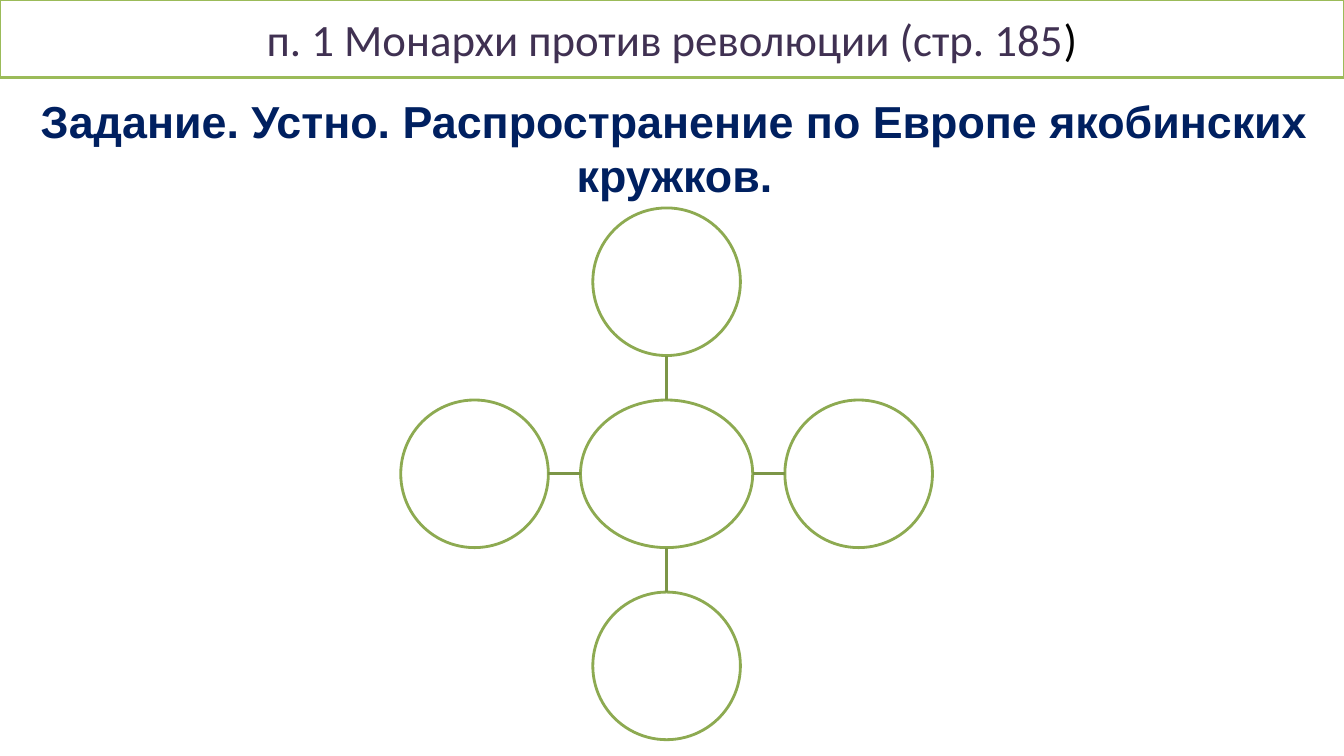
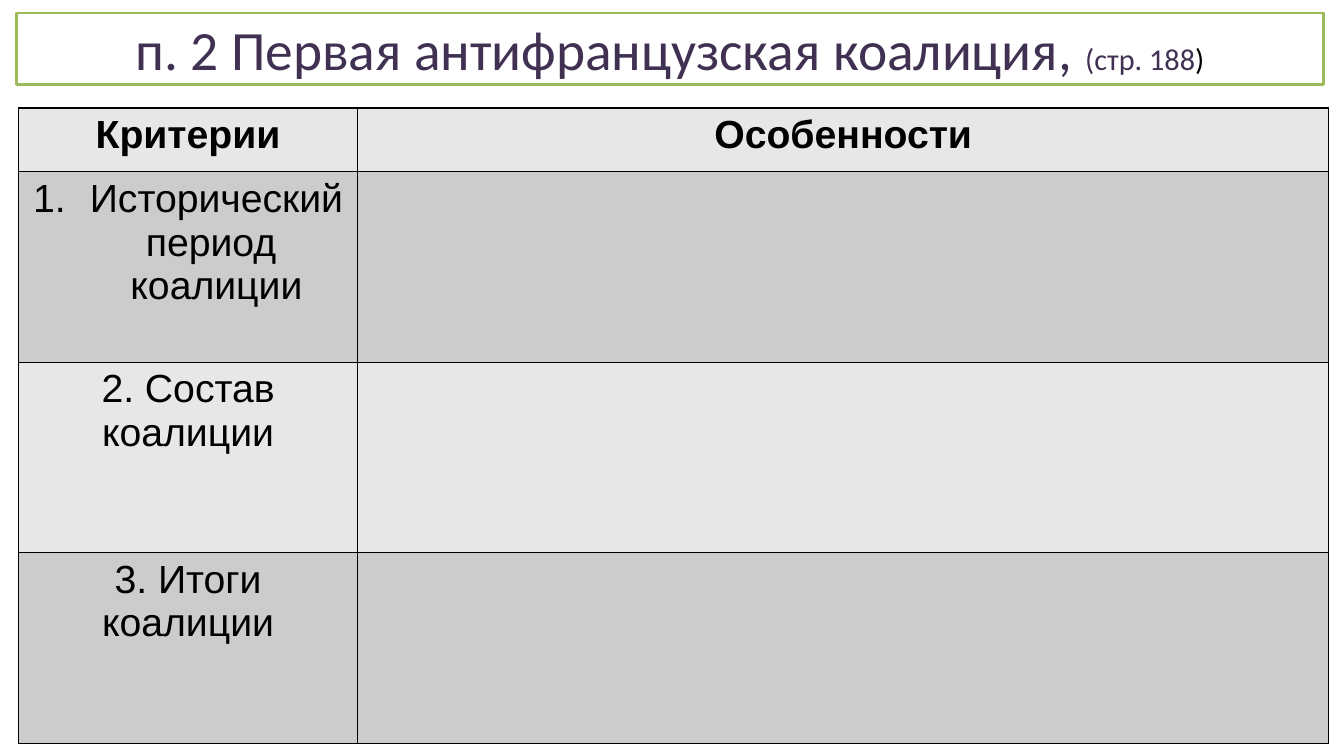
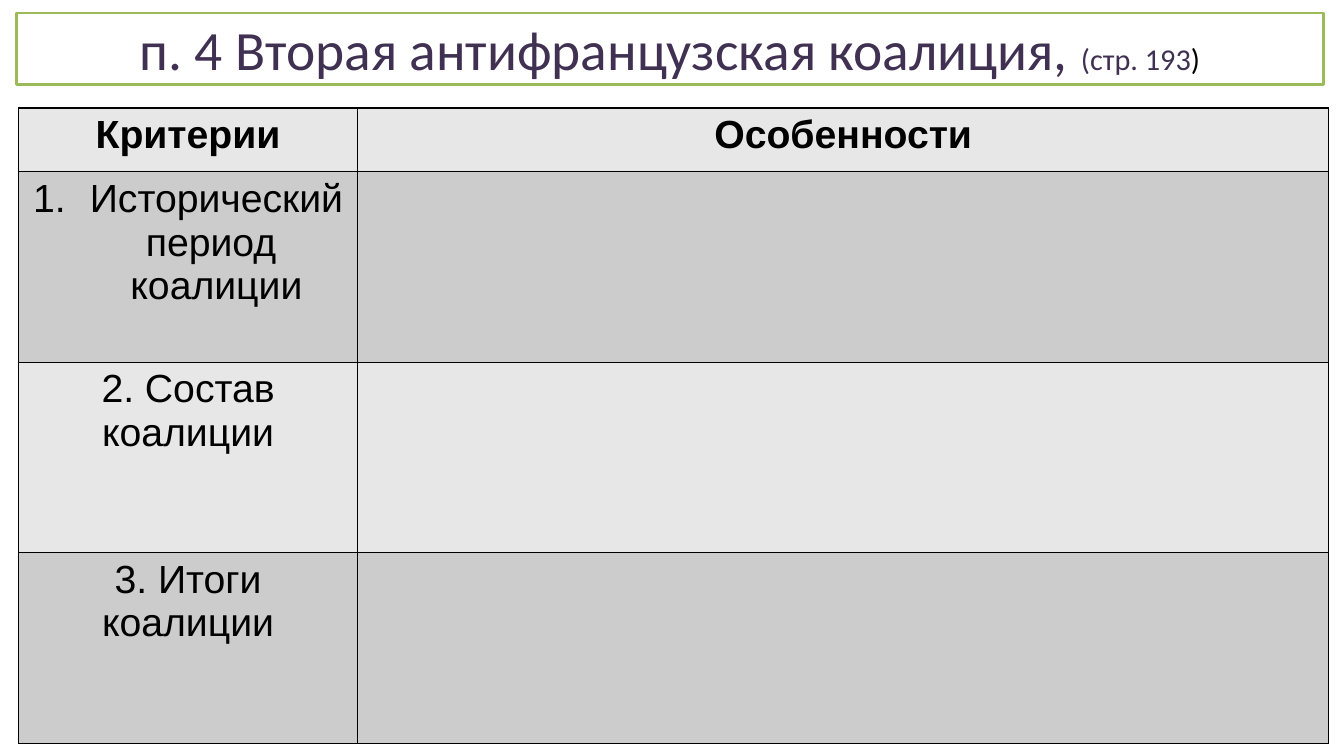
from lxml import etree
from pptx import Presentation
from pptx.dml.color import RGBColor
from pptx.enum.shapes import MSO_CONNECTOR, MSO_SHAPE
from pptx.enum.text import MSO_ANCHOR, PP_ALIGN
from pptx.oxml.ns import qn
from pptx.util import Cm, Pt

CENTER = PP_ALIGN.CENTER
MIDDLE = MSO_ANCHOR.MIDDLE
RECTANGLE = MSO_SHAPE.RECTANGLE
OVAL = MSO_SHAPE.OVAL
STRAIGHT = MSO_CONNECTOR.STRAIGHT

WHITE = RGBColor(0xFF, 0xFF, 0xFF)
BLACK = RGBColor(0x00, 0x00, 0x00)
PURPLE = RGBColor(0x40, 0x31, 0x52)
NAVY = RGBColor(0x00, 0x20, 0x60)
GREEN = RGBColor(0x9B, 0xBB, 0x59)
CIRCLE_GREEN = RGBColor(0x8D, 0xAA, 0x51)
SPOKE_GREEN = RGBColor(0x7C, 0x96, 0x47)
LIGHT_GREY = RGBColor(0xE7, 0xE7, 0xE7)
DARK_GREY = RGBColor(0xCC, 0xCC, 0xCC)


def add_outlined(slide, preset, box, line_color):
    shape = slide.shapes.add_shape(preset, *[Cm(v) for v in box])
    shape.shadow.inherit = False
    shape.fill.solid()
    shape.fill.fore_color.rgb = WHITE
    shape.line.color.rgb = line_color
    shape.line.width = Pt(2)
    return shape


def add_run(paragraph, text, font, size, color, bold=False):
    paragraph.alignment = CENTER
    run = paragraph.add_run()
    run.text = text
    style = {"name": font, "size": Pt(size), "bold": bold}
    for attribute, value in style.items():
        setattr(run.font, attribute, value)
    run.font.color.rgb = color


prs = Presentation()
prs.slide_width, prs.slide_height = Cm(33.87), Cm(19.05)
blank = prs.slide_layouts[6]

# Slides with their title bands
TOP_BAND = (0, 0, 33.87, 1.96)
INSET_BAND = (0.41, 0.33, 32.94, 1.8)
headings = [
    (TOP_BAND, [("п. 1 Монархи против революции (стр. 185", 32, PURPLE),
                (")", 32, BLACK)]),
    (INSET_BAND, [("п. 2 Первая антифранцузская коалиция, ", 39.6, PURPLE),
                  ("(стр. 188", 21.6, PURPLE), (")", 21.6, BLACK)]),
    (INSET_BAND, [("п. 4 Вторая антифранцузская коалиция, ", 39.6, PURPLE),
                  ("(стр. 193", 21.6, PURPLE), (")", 21.6, BLACK)]),
]
slides = []
for band, parts in headings:
    slide = prs.slides.add_slide(blank)
    title = add_outlined(slide, RECTANGLE, band, GREEN).text_frame
    title.word_wrap = True
    title.vertical_anchor = MIDDLE
    for text, size, color in parts:
        add_run(title.paragraphs[0], text, "Calibri", size, color)
    slides.append(slide)
circles_slide, *coalition_slides = slides

# Task on the first slide
task = circles_slide.shapes.add_textbox(Cm(0.5), Cm(2.24), Cm(33), Cm(3)).text_frame
task.word_wrap = True
task.paragraphs[0].space_before = Pt(4)
add_run(task.paragraphs[0],
        "Задание. Устно. Распространение по Европе якобинских кружков.",
        "Arial", 32, NAVY, True)

# Hub with four circles around it
HUB_X, HUB_Y = 16.8, 11.94
HUB_WIDTH, DIAMETER = 4.34, 3.72
REACH = 4.84
add_outlined(circles_slide, OVAL,
             (HUB_X - HUB_WIDTH / 2, HUB_Y - DIAMETER / 2, HUB_WIDTH, DIAMETER),
             CIRCLE_GREEN)
for dx, dy in [(0, -1), (1, 0), (0, 1), (-1, 0)]:
    x, y = HUB_X + dx * REACH, HUB_Y + dy * REACH
    add_outlined(circles_slide, OVAL,
                 (x - DIAMETER / 2, y - DIAMETER / 2, DIAMETER, DIAMETER),
                 CIRCLE_GREEN)
    spoke = circles_slide.shapes.add_connector(
        STRAIGHT,
        Cm(HUB_X + dx * HUB_WIDTH / 2), Cm(HUB_Y + dy * DIAMETER / 2),
        Cm(x - dx * DIAMETER / 2), Cm(y - dy * DIAMETER / 2))
    spoke.line.color.rgb = SPOKE_GREEN
    spoke.line.width = Pt(2)
    etree.SubElement(spoke._element.spPr, qn("a:effectLst"))

# Coalition tables
COLUMN_WIDTHS = [8.54, 24.48]
ROW_HEIGHTS = [1.61, 4.8, 4.8, 4.8]
ROWS = [
    (["Критерии"], ["Особенности"]),
    (["Исторический период ", "коалиции"], []),
    (["2. Состав коалиции"], []),
    (["3. Итоги коалиции"], []),
]
for slide in coalition_slides:
    criteria = slide.shapes.add_table(
        len(ROWS), len(COLUMN_WIDTHS), Cm(0.47), Cm(2.72),
        Cm(sum(COLUMN_WIDTHS)), Cm(sum(ROW_HEIGHTS))).table
    for column, width in zip(criteria.columns, COLUMN_WIDTHS):
        column.width = Cm(width)
    for r, (row, height) in enumerate(zip(criteria.rows, ROW_HEIGHTS)):
        row.height = Cm(height)
        for cell, lines in zip(row.cells, ROWS[r]):
            cell_properties = cell._tc.get_or_add_tcPr()
            for side in ("a:lnL", "a:lnR", "a:lnT", "a:lnB"):
                border = etree.SubElement(cell_properties, qn(side), w=str(Pt(1)))
                border_fill = etree.SubElement(border, qn("a:solidFill"))
                etree.SubElement(border_fill, qn("a:srgbClr"), val=str(BLACK))
            cell.fill.solid()
            cell.fill.fore_color.rgb = DARK_GREY if r % 2 else LIGHT_GREY
            for i, line in enumerate(lines):
                frame = cell.text_frame
                paragraph = frame.add_paragraph() if i else frame.paragraphs[0]
                add_run(paragraph, line, "Arial", 28, BLACK, r == 0)

    # Numbered first criterion, its second line under the same indent
    numbered, continued = criteria.cell(1, 0).text_frame.paragraphs
    for paragraph in (numbered, continued):
        paragraph._p.get_or_add_pPr().set("marL", str(Cm(1.43)))
    numbering = numbered._p.get_or_add_pPr()
    numbering.set("indent", str(-Cm(1.43)))
    etree.SubElement(numbering, qn("a:buAutoNum"), type="arabicPeriod")
    continued._p.get_or_add_pPr().set("indent", "0")

prs.save("out.pptx")
